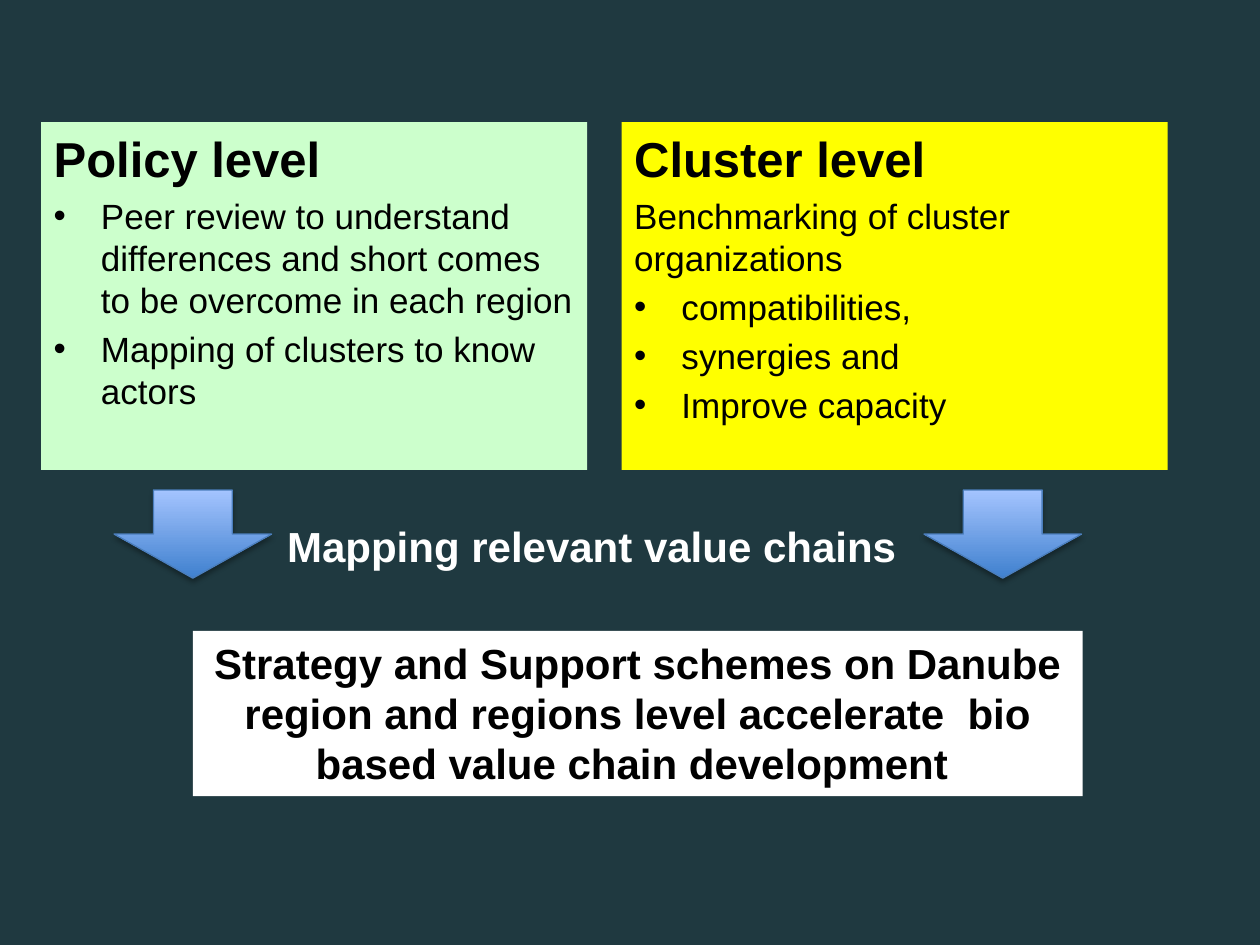
from dataclasses import dataclass

from lxml.etree import SubElement
from pptx import Presentation
from pptx.dml.color import RGBColor
from pptx.enum.shapes import MSO_SHAPE
from pptx.enum.text import MSO_ANCHOR, MSO_AUTO_SIZE, PP_ALIGN
from pptx.oxml.ns import qn
from pptx.util import Pt

FONT = "Arial"
BLACK, WHITE = "000000", "FFFFFF"
PANEL_TOP, PANEL_WIDTH, PANEL_HEIGHT = 69.8, 312, 198.7
ARROW_TOP, ARROW_WIDTH, ARROW_HEIGHT = 280, 90, 50.4


@dataclass
class Line:
    text: str
    size: float = 20
    bold: bool = False
    bullet: bool = True


@dataclass
class Panel:
    left: float
    fill: str
    lines: list[Line]


PANELS = [
    Panel(23.5, "CCFFCC", [
        Line("Policy level", 28, bold=True, bullet=False),
        Line("Peer review to understand differences and short comes "
             "to be overcome in each region"),
        Line("Mapping of clusters to know actors"),
    ]),
    Panel(355.2, "FFFF00", [
        Line("Cluster level", 28, bold=True, bullet=False),
        Line("Benchmarking of cluster organizations", bullet=False),
        Line("compatibilities,"),
        Line("synergies and"),
        Line("Improve capacity"),
    ]),
]
ARROW_LEFTS = [65.2, 528]


def rgb(color: str) -> RGBColor:
    return RGBColor.from_string(color)


def fill_solid(target, color: str) -> None:
    target.fill.solid()
    target.fill.fore_color.rgb = rgb(color)


def add_run(paragraph, text: str, size: float, color: str, bold: bool) -> None:
    run = paragraph.add_run()
    run.text = text
    run.font.name = FONT
    run.font.size = Pt(size)
    run.font.bold = bold
    run.font.color.rgb = rgb(color)


def fill_panel(placeholder, panel: Panel) -> None:
    placeholder.left, placeholder.top = Pt(panel.left), Pt(PANEL_TOP)
    placeholder.width, placeholder.height = Pt(PANEL_WIDTH), Pt(PANEL_HEIGHT)
    fill_solid(placeholder, panel.fill)
    frame = placeholder.text_frame
    frame.auto_size = MSO_AUTO_SIZE.NONE
    for index, line in enumerate(panel.lines):
        paragraph = frame.add_paragraph() if index else frame.paragraphs[0]
        if not line.bullet:
            properties = paragraph._p.get_or_add_pPr()
            properties.set("marL", "0")
            properties.set("indent", "0")
            SubElement(properties, qn("a:buNone"))
        add_run(paragraph, line.text, line.size, BLACK, line.bold)


def write_centered(shape, text: str, color: str) -> None:
    frame = shape.text_frame
    frame.word_wrap = True
    frame.vertical_anchor = MSO_ANCHOR.TOP
    paragraph = frame.paragraphs[0]
    paragraph.alignment = PP_ALIGN.CENTER
    add_run(paragraph, text, 24, color, bold=True)


def add_soft_shadow(shape) -> None:
    effects = SubElement(shape._element.spPr, qn("a:effectLst"))
    shadow = SubElement(effects, qn("a:outerShdw"), blurRad=str(Pt(3.1)),
                        dist=str(Pt(1.8)), dir="5400000", rotWithShape="0")
    color = SubElement(shadow, qn("a:srgbClr"), val=BLACK)
    SubElement(color, qn("a:alpha"), val="35000")


def add_down_arrow(slide, left: float) -> None:
    arrow = slide.shapes.add_shape(MSO_SHAPE.DOWN_ARROW, Pt(left), Pt(ARROW_TOP),
                                   Pt(ARROW_WIDTH), Pt(ARROW_HEIGHT))
    arrow.fill.gradient()
    arrow.fill.gradient_angle = 90
    for stop, color in zip(arrow.fill.gradient_stops, ("3F80CE", "A4C4FF")):
        stop.color.rgb = rgb(color)
    arrow.line.color.rgb = rgb("4B7EBC")
    arrow.line.width = Pt(0.75)
    add_soft_shadow(arrow)


def main() -> None:
    presentation = Presentation()
    presentation.slide_width, presentation.slide_height = Pt(720), Pt(540)
    two_content = presentation.slide_layouts[3]
    slide = presentation.slides.add_slide(two_content)
    fill_solid(slide.background, "1F3940")

    title, *bodies = slide.placeholders
    title._element.getparent().remove(title._element)
    for body, panel in zip(bodies, PANELS):
        fill_panel(body, panel)

    strategy = slide.shapes.add_shape(MSO_SHAPE.RECTANGLE, Pt(110.2), Pt(360.5),
                                      Pt(508.4), Pt(94.5))
    strategy.shadow.inherit = False
    fill_solid(strategy, WHITE)
    strategy.line.fill.background()
    write_centered(strategy, "Strategy and Support schemes on Danube region and "
                   "regions level accelerate  bio based value chain development ", BLACK)

    caption = slide.shapes.add_textbox(Pt(65.2), Pt(293.8), Pt(552.5), Pt(36.3))
    write_centered(caption, "Mapping relevant value chains ", WHITE)

    for left in ARROW_LEFTS:
        add_down_arrow(slide, left)

    presentation.save("out.pptx")


if __name__ == "__main__":
    main()
